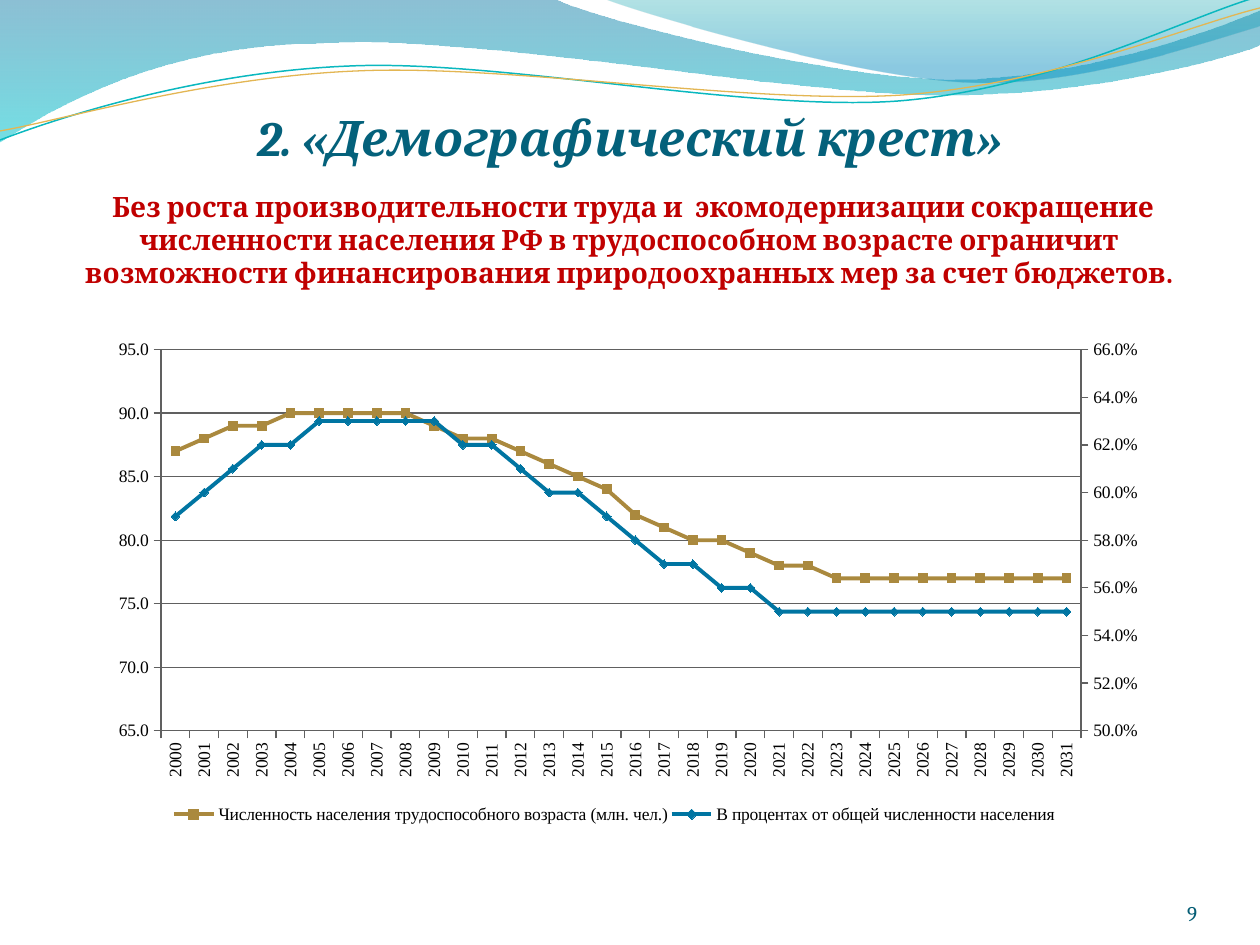
"""Build the slide on the working-age population with its two-axis line chart."""
from copy import deepcopy
from dataclasses import dataclass

from lxml.etree import SubElement
from pptx import Presentation
from pptx.chart.axis import CategoryAxis, ValueAxis
from pptx.chart.data import CategoryChartData
from pptx.dml.color import RGBColor
from pptx.enum.chart import (XL_CHART_TYPE, XL_LEGEND_POSITION, XL_MARKER_STYLE,
                             XL_TICK_LABEL_POSITION, XL_TICK_MARK)
from pptx.enum.text import MSO_ANCHOR, PP_ALIGN
from pptx.oxml import parse_xml
from pptx.oxml.ns import nsdecls, qn
from pptx.util import Pt

PX = 914400 / 126


@dataclass(frozen=True)
class Theme:
    title: str = "04617B"
    message: str = "C00000"
    number: str = "045D75"
    ink: str = "000000"
    axis: str = "606060"
    people: str = "AA893E"
    share: str = "0075A2"
    teal: str = "0AB8BF"
    gold: str = "E3B653"
    wave: tuple = ((0, "0074A1", 45), (1, "00C6CF", 55))
    crest: tuple = ((0, "00A1A9", 30), (0.8, "008BBF", 45))
    text_font: str = "Cambria"
    chart_font: str = "Times New Roman"
    title_size: int = 28
    message_size: int = 16
    number_size: int = 12
    chart_size: int = 10


YEARS = [str(y) for y in range(2000, 2032)]
PEOPLE = [87, 88, 89, 89, 90, 90, 90, 90, 90, 89, 88, 88, 87, 86, 85, 84,
          82, 81, 80, 80, 79, 78, 78, 77, 77, 77, 77, 77, 77, 77, 77, 77]
SHARE = [0.59, 0.6, 0.61, 0.62, 0.62, 0.63, 0.63, 0.63, 0.63, 0.63, 0.62,
         0.62, 0.61, 0.6, 0.6, 0.59, 0.58, 0.57, 0.57, 0.56, 0.56, 0.55,
         0.55, 0.55, 0.55, 0.55, 0.55, 0.55, 0.55, 0.55, 0.55, 0.55]

WAVE = [(0, -1), (554, -1), (600, 21, 837, 79, 955, 79),
        (1075, 79, 1207, 33, 1260, 11), (1261, 45),
        (1239, 55, 1096, 96, 940, 95), (784, 94, 481, 35, 324, 43),
        (163, 44, 58, 105, -1, 142)]
CREST = [(604, -1), (641, 14, 859, 78, 969, 82),
         (1079, 87, 1211, 40, 1260, 26), (1260, 0)]
TEAL_LINE = [(0, 140), (60, 117, 199, 72, 349, 66),
             (498, 59, 747, 112, 898, 101), (1050, 89, 1182, 19, 1257, -3)]
GOLD_LINE = [(0, 131), (59, 121, 207, 77, 357, 71),
             (508, 64, 752, 105, 903, 95), (1053, 84, 1187, 26, 1260, 8)]


def px(n):
    return round(n * PX)


def rgb(color):
    return RGBColor.from_string(color)


def write(p, text, font, size, color, bold=False, italic=False, align=PP_ALIGN.CENTER):
    p.alignment = align
    r = p.add_run()
    r.text = text
    f = r.font
    f.name, f.size, f.bold, f.italic = font, Pt(size), bold, italic
    f.color.rgb = rgb(color)


def bend(sp, path):
    for line, seg in zip(sp._element.xpath(".//a:path/a:lnTo"), path[1:]):
        if len(seg) == 6:
            line.tag = qn("a:cubicBezTo")
            end = line[0]
            for x, y in (seg[:2], seg[2:4]):
                pt = deepcopy(end)
                pt.set("x", str(px(x) - sp.left))
                pt.set("y", str(px(y) - sp.top))
                line.insert(len(line) - 1, pt)


def manual_layout(x, y, w, h, inner=False):
    target = '<c:layoutTarget val="inner"/>' if inner else ""
    return parse_xml(
        f'<c:layout {nsdecls("c")}><c:manualLayout>{target}'
        '<c:xMode val="edge"/><c:yMode val="edge"/>'
        f'<c:x val="{x}"/><c:y val="{y}"/><c:w val="{w}"/><c:h val="{h}"/>'
        '</c:manualLayout></c:layout>')


def scale_axis(axis, low, high, unit, fmt):
    axis.minimum_scale, axis.maximum_scale, axis.major_unit = low, high, unit
    axis.tick_labels.number_format = fmt
    axis.tick_labels.number_format_is_linked = False


def add_right_axis(chart):
    area = chart.element.xpath("c:chart/c:plotArea")[0]
    left = area.find(qn("c:lineChart"))
    right = deepcopy(left)
    left.remove(left.findall(qn("c:ser"))[1])
    right.remove(right.findall(qn("c:ser"))[0])
    left.addnext(right)
    cat, val = (deepcopy(area.find(qn(f"c:{n}"))) for n in ("catAx", "valAx"))
    area.find(qn("c:valAx")).addnext(val)
    val.addnext(cat)
    ids = {ax.find(qn("c:axId")).get("val"): new
           for ax, new in ((cat, "50010"), (val, "50020"))}
    for el in [e for part in (right, cat, val) for e in part.xpath("c:axId | c:crossAx")]:
        el.set("val", ids[el.get("val")])
    val.find(qn("c:axPos")).set("val", "r")
    val.find(qn("c:crosses")).set("val", "max")
    CategoryAxis(cat).visible = False
    axis = ValueAxis(val)
    axis.has_major_gridlines = False
    return axis


class Deck:
    def __init__(self, theme, slide):
        self.theme, self.s = theme, slide

    def freeform(self, path, close):
        pts = [(px(seg[-2]), px(seg[-1])) for seg in path]
        fb = self.s.shapes.build_freeform(*pts[0])
        fb.add_line_segments(pts[1:], close=close)
        sp = fb.convert_to_shape()
        sp.shadow.inherit = False
        bend(sp, path)
        return sp

    def area(self, path, stops):
        sp = self.freeform(path, True)
        sp.line.fill.background()
        sp.fill.gradient()
        sp.fill.gradient_angle = 270
        for gs, (pos, color, _) in zip(sp.fill.gradient_stops, stops):
            gs.position = pos
            gs.color.rgb = rgb(color)
        clrs = sp._element.xpath(".//a:gradFill//a:srgbClr")
        for clr, (_, _, opacity) in zip(clrs, stops):
            SubElement(clr, qn("a:alpha")).set("val", str(opacity * 1000))

    def curve(self, path, color, width):
        sp = self.freeform(path, False)
        sp.fill.background()
        sp.line.color.rgb = rgb(color)
        sp.line.width = Pt(width)

    def text_box(self, x, y, w, h, anchor, top=0):
        tf = self.s.shapes.add_textbox(*map(px, (x, y, w, h))).text_frame
        tf.word_wrap = True
        tf.vertical_anchor = anchor
        tf.margin_left = tf.margin_right = tf.margin_bottom = 0
        tf.margin_top = px(top)
        return tf

    def line_chart(self, x, y, w, h):
        th = self.theme
        data = CategoryChartData()
        data.categories = YEARS
        data.add_series("Численность населения трудоспособного возраста (млн. чел.)", PEOPLE, "0.0")
        data.add_series("В процентах от общей численности населения", SHARE, "0.0%")
        chart = self.s.shapes.add_chart(
            XL_CHART_TYPE.LINE_MARKERS, *map(px, (x, y, w, h)), data).chart
        chart.has_title = False
        chart.font.name, chart.font.size = th.chart_font, Pt(th.chart_size)
        chart.font.color.rgb = rgb(th.ink)
        chart.plots[0].vary_by_categories = False
        looks = ((th.people, XL_MARKER_STYLE.SQUARE), (th.share, XL_MARKER_STYLE.DIAMOND))
        for ser, (color, style) in zip(chart.plots[0].series, looks):
            ser.smooth = False
            ser.format.line.width = Pt(2.25)
            ser.format.line.color.rgb = rgb(color)
            ser.marker.style, ser.marker.size = style, 5
            ser.marker.format.fill.solid()
            ser.marker.format.fill.fore_color.rgb = rgb(color)
            ser.marker.format.line.color.rgb = rgb(color)
        cat, val = chart.category_axis, chart.value_axis
        for axis in (cat, val):
            axis.major_tick_mark = XL_TICK_MARK.OUTSIDE
            axis.format.line.color.rgb = rgb(th.axis)
        val.major_gridlines.format.line.color.rgb = rgb(th.axis)
        cat.tick_label_position = XL_TICK_LABEL_POSITION.LOW
        cat.tick_labels.font.size = Pt(th.chart_size)
        cat._element.find(qn("c:txPr")).find(qn("a:bodyPr")).set("rot", "-5400000")
        scale_axis(val, 65, 95, 5, "0.0")
        scale_axis(add_right_axis(chart), 0.5, 0.66, 0.02, "0.0%")
        area = chart.element.xpath("c:chart/c:plotArea")[0]
        chart.has_legend = True
        legend = chart.legend
        legend.position = XL_LEGEND_POSITION.BOTTOM
        legend.include_in_layout = False
        for part in (area, legend._element):
            for old in part.findall(qn("c:layout")):
                part.remove(old)
        area.insert(0, manual_layout(0.072, 0.064, 0.859, 0.686, inner=True))
        legend._element.find(qn("c:legendPos")).addnext(manual_layout(0.08, 0.87, 0.83, 0.06))


def main():
    prs = Presentation()
    prs.slide_width, prs.slide_height = px(1260), px(945)
    th = Theme()
    deck = Deck(th, prs.slides.add_slide(prs.slide_layouts[6]))
    deck.area(WAVE, th.wave)
    deck.area(CREST, th.crest)
    deck.curve(TEAL_LINE, th.teal, 0.85)
    deck.curve(GOLD_LINE, th.gold, 0.75)
    tf = deck.text_box(63, 97, 1133, 227, MSO_ANCHOR.TOP, top=11)
    write(tf.paragraphs[0], "2. «Демографический крест»", th.text_font, th.title_size,
          th.title, bold=True, italic=True)
    p = tf.add_paragraph()
    p.space_before, p.line_spacing = Pt(13), Pt(19)
    p._p.get_or_add_pPr().set("indent", str(px(8)))
    write(p, "Без роста производительности труда и  экомодернизации сокращение "
          "численности населения РФ в трудоспособном возрасте ограничит возможности "
          "финансирования природоохранных мер за счет бюджетов.",
          th.text_font, th.message_size, th.message, bold=True)
    tf = deck.text_box(1092, 876, 105, 50, MSO_ANCHOR.BOTTOM)
    write(tf.paragraphs[0], "9", th.text_font, th.number_size, th.number, align=PP_ALIGN.RIGHT)
    deck.line_chart(84, 314, 1071, 556)
    prs.save("out.pptx")


if __name__ == "__main__":
    main()
